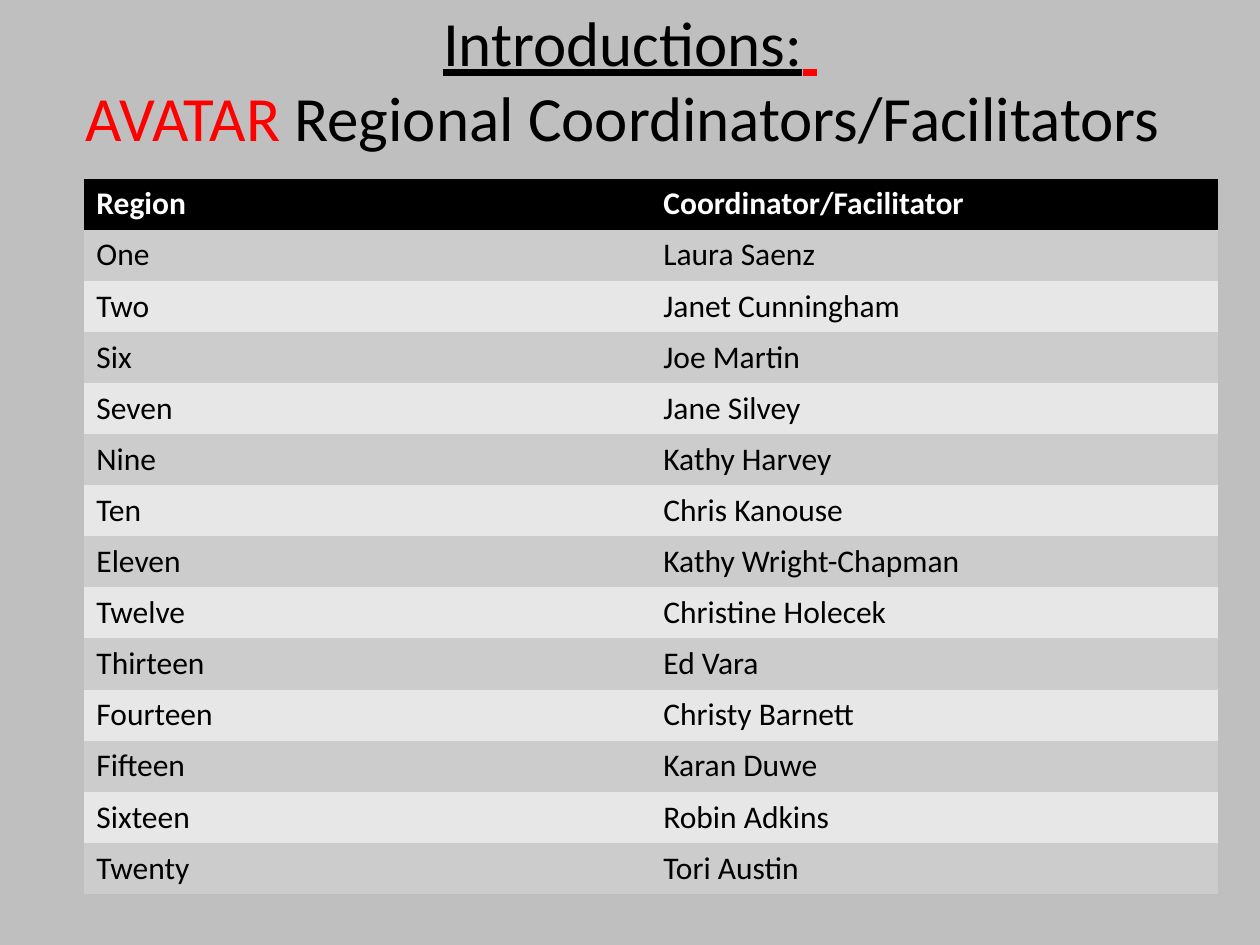
from dataclasses import dataclass

from pptx import Presentation
from pptx.dml.color import RGBColor
from pptx.enum.text import MSO_ANCHOR, PP_ALIGN
from pptx.util import Cm, Pt

MIDDLE = MSO_ANCHOR.MIDDLE
CENTER = PP_ALIGN.CENTER
NO_STYLE_NO_GRID = "{2D5ABB26-0587-4C30-8999-92F81FD0307C}"
BLANK_LAYOUT = 6


@dataclass(frozen=True)
class Theme:
    font: str = "Calibri"
    title_size: Pt = Pt(36)
    table_size: Pt = Pt(18)
    background: RGBColor = RGBColor(0xBF, 0xBF, 0xBF)
    text: RGBColor = RGBColor(0, 0, 0)
    accent: RGBColor = RGBColor(0xFF, 0, 0)
    header_fill: RGBColor = RGBColor(0, 0, 0)
    header_text: RGBColor = RGBColor(0xFF, 0xFF, 0xFF)
    bands: tuple = (RGBColor(0xE7, 0xE7, 0xE7), RGBColor(0xCC, 0xCC, 0xCC))


theme = Theme()

ROWS = [
    ("Region", "Coordinator/Facilitator"),
    ("One", "Laura Saenz"),
    ("Two", "Janet Cunningham"),
    ("Six", "Joe Martin"),
    ("Seven", "Jane Silvey"),
    ("Nine", "Kathy Harvey"),
    ("Ten", "Chris Kanouse"),
    ("Eleven", "Kathy Wright-Chapman"),
    ("Twelve", "Christine Holecek"),
    ("Thirteen", "Ed Vara"),
    ("Fourteen", "Christy Barnett"),
    ("Fifteen", "Karan Duwe"),
    ("Sixteen", "Robin Adkins"),
    ("Twenty", "Tori Austin"),
]

TITLE_LINES = [
    [("Introductions:", theme.text, True), (" ", theme.accent, True)],
    [("AVATAR ", theme.accent, False),
     ("Regional Coordinators/Facilitators ", theme.text, False)],
]

presentation = Presentation()
presentation.slide_width = Cm(25.4)
presentation.slide_height = Cm(19.05)
slide = presentation.slides.add_slide(presentation.slide_layouts[BLANK_LAYOUT])
slide.background.fill.solid()
slide.background.fill.fore_color.rgb = theme.background

# Title
title = slide.shapes.add_textbox(Cm(1.27), Cm(0), Cm(22.86), Cm(3.18))
title.text_frame.word_wrap = True
title.text_frame.vertical_anchor = MIDDLE
paragraph = title.text_frame.paragraphs[0]
paragraph.alignment = CENTER
paragraph.font.name = theme.font
paragraph.font.size = theme.title_size
for line_number, line in enumerate(TITLE_LINES):
    if line_number:
        paragraph.add_line_break()
    for text, color, underlined in line:
        run = paragraph.add_run()
        run.text = text
        run.font.color.rgb = color
        run.font.underline = underlined

# Coordinator table
row_height = Cm(1.03)
table = slide.shapes.add_table(
    len(ROWS), 2, Cm(1.69), Cm(3.6), Cm(22.86), row_height * len(ROWS)
).table
table._tbl.tblPr.find("{*}tableStyleId").text = NO_STYLE_NO_GRID
for row_number, values in enumerate(ROWS):
    is_header = row_number == 0
    table.rows[row_number].height = row_height
    for column_number, value in enumerate(values):
        cell = table.cell(row_number, column_number)
        cell.fill.solid()
        cell.fill.fore_color.rgb = (
            theme.header_fill if is_header else theme.bands[row_number % 2]
        )
        paragraph = cell.text_frame.paragraphs[0]
        paragraph.text = value
        paragraph.font.name = theme.font
        paragraph.font.size = theme.table_size
        paragraph.font.bold = is_header
        paragraph.font.color.rgb = theme.header_text if is_header else theme.text

presentation.save("out.pptx")
